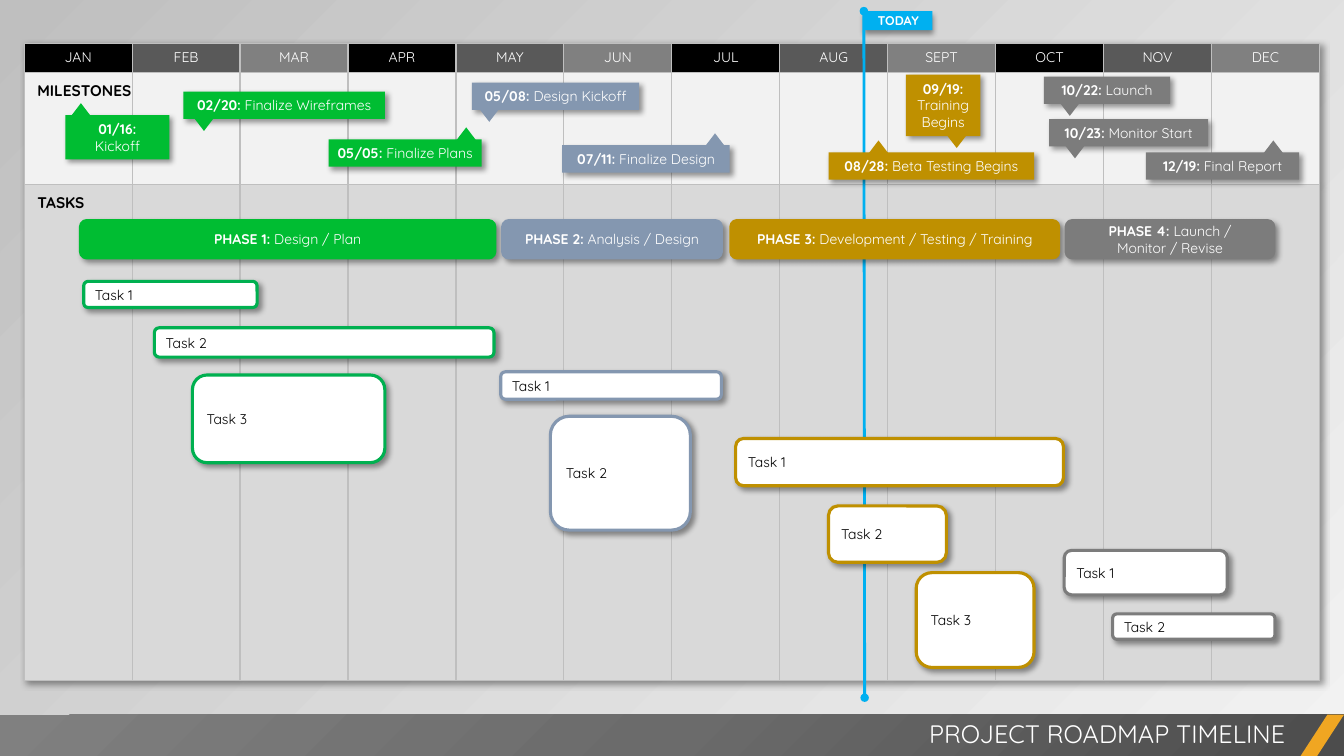
from collections import namedtuple

from pptx import Presentation
from pptx.dml.color import RGBColor
from pptx.enum.shapes import MSO_CONNECTOR, MSO_SHAPE as Shape
from pptx.enum.text import MSO_ANCHOR as Anchor, PP_ALIGN as Align
from pptx.oxml import parse_xml
from pptx.oxml.ns import nsdecls, qn
from pptx.util import Cm, Pt

Box = namedtuple("Box", "left top width height")

FONT = "Quicksand"
BLACK = RGBColor(0x00, 0x00, 0x00)
WHITE = RGBColor(0xFF, 0xFF, 0xFF)
CHARCOAL = RGBColor(0x59, 0x59, 0x59)
MID_GRAY = RGBColor(0x80, 0x80, 0x80)
BORDER = RGBColor(0xBF, 0xBF, 0xBF)
PALE = RGBColor(0xF2, 0xF2, 0xF2)
LIGHT = RGBColor(0xD9, 0xD9, 0xD9)
FOOTER_DARK = RGBColor(0x4C, 0x4C, 0x4C)
FOOTER_MID = RGBColor(0x6B, 0x6B, 0x6B)
ORANGE = RGBColor(0xF0, 0xA6, 0x22)
CYAN = RGBColor(0x00, 0xB0, 0xF0)
GREEN = RGBColor(0x00, 0xBD, 0x32)
TASK_GREEN = RGBColor(0x00, 0xB0, 0x50)
BLUE = RGBColor(0x84, 0x97, 0xB0)
GOLD = RGBColor(0xBF, 0x90, 0x00)
GRAY = RGBColor(0x7C, 0x7C, 0x7C)

MONTHS = "JAN FEB MAR APR MAY JUN JUL AUG SEPT OCT NOV DEC".split()
MONTH_FILLS = [BLACK, CHARCOAL, MID_GRAY]
ROW_HEIGHTS = [0.74, 2.82, 12.5]

# Label, colour, box within the milestones row, pointer offset, pointer direction
MILESTONES = [
    ("05/05: Finalize Plans", GREEN, Box(7.67, 1.68, 3.86, 0.69), 3.18, "up"),
    ("01/16:\nKickoff", GREEN, Box(1.04, 1.07, 2.62, 1.12), 0.1, "up"),
    ("02/20: Finalize Wireframes", GREEN, Box(4.01, 0.48, 5.08, 0.69), 0.23, "down"),
    ("05/08: Design Kickoff", BLUE, Box(11.28, 0.25, 4.22, 0.69), 0.15, "down"),
    ("07/11: Finalize Design", BLUE, Box(13.56, 1.83, 4.22, 0.69), 3.56, "up"),
    ("09/19: Training Begins", GOLD, Box(22.22, 0.05, 1.88, 1.55), 0.99, "down"),
    ("08/28: Beta Testing Begins", GOLD, Box(20.27, 2.01, 5.18, 0.69), 0.97, "up"),
    ("10/22: Launch", GRAY, Box(25.7, 0.1, 3.18, 0.69), 0.36, "down"),
    ("10/23: Monitor Start", GRAY, Box(25.83, 1.17, 4.01, 0.69), 0.36, "down"),
    ("12/19: Final Report", GRAY, Box(28.27, 2.01, 3.86, 0.69), 2.92, "up"),
]

# Label, colour, task outline, left, width, task boxes within the tasks row
PHASES = [
    ("PHASE 1: Design / Plan", GREEN, TASK_GREEN, 1.42, 10.44,
     [Box(1.5, 2.44, 4.37, 0.66), Box(3.28, 3.61, 8.56, 0.74), Box(4.24, 4.8, 4.85, 2.21)]),
    ("PHASE 2: Analysis / Design", BLUE, BLUE, 12.06, 5.51,
     [Box(12.01, 4.72, 5.56, 0.69), Box(13.26, 5.84, 3.53, 2.87)]),
    ("PHASE 3: Development / Testing / Training", GOLD, GOLD, 17.81, 8.26,
     [Box(17.93, 6.4, 8.26, 1.19), Box(20.27, 8.1, 2.97, 1.42), Box(22.48, 9.78, 2.97, 2.39)]),
    ("PHASE 4: Launch / Monitor / Revise", GRAY, GRAY, 26.26, 5.23,
     [Box(26.21, 9.22, 4.11, 1.12), Box(27.43, 10.82, 4.09, 0.64)]),
]


def inside(outer, inner):
    return inner._replace(left=outer.left + inner.left, top=outer.top + inner.top)


def lengths(box):
    return [Cm(value) for value in box]


def set_all(target, values):
    for name, value in values.items():
        setattr(target, name, value)


def shadow_xml(angle):
    return parse_xml(
        f'<a:outerShdw {nsdecls("a")} blurRad="50800" dist="38100" dir="{angle * 60000}"'
        ' algn="tl" rotWithShape="0"><a:srgbClr val="000000"><a:alpha val="40000"/>'
        '</a:srgbClr></a:outerShdw>')


def write(frame, text, color, size=10, align=Align.CENTER, bold=False, **frame_values):
    """Write one paragraph per line; whatever precedes a colon is bold."""
    set_all(frame, {"word_wrap": True, **frame_values})
    for index, line in enumerate(text.split("\n")):
        paragraph = frame.add_paragraph() if index else frame.paragraphs[0]
        paragraph.alignment = align
        head, colon, tail = line.partition(":")
        parts = [(head + colon, True), (tail, False)] if colon else [(line, bold)]
        for content, is_bold in parts:
            if content:
                run = paragraph.add_run()
                run.text = content
                set_all(run.font, {"name": FONT, "size": Pt(size), "bold": is_bold})
                run.font.color.rgb = color


def add_block(shapes, kind, box, fill, outline=None, shadow_angle=None):
    shape = shapes.add_shape(kind, *lengths(box))
    shape.fill.solid()
    shape.fill.fore_color.rgb = fill
    if outline is None:
        shape.line.fill.background()
    else:
        shape.line.color.rgb = outline
        shape.line.width = Pt(2.25)
    shape.shadow.inherit = False
    if shadow_angle is not None:
        shape._element.spPr.find(qn("a:effectLst")).append(shadow_xml(shadow_angle))
    return shape


def add_label(slide, box, text, color, size, **text_values):
    write(slide.shapes.add_textbox(*lengths(box)).text_frame, text, color, size, **text_values)


def add_background(slide):
    fill = slide.background.fill
    fill.gradient()
    fill.gradient_angle = 135
    for stop, position, color in zip(fill.gradient_stops, (0, 1), (PALE, BORDER)):
        stop.position = position
        stop.color.rgb = color


def add_footer(slide, box):
    bar = add_block(slide.shapes, Shape.RECTANGLE, box, FOOTER_DARK)
    stops = "".join(
        f'<a:gs pos="{position}"><a:srgbClr val="{color}"/></a:gs>'
        for position, color in ((0, FOOTER_DARK), (50000, FOOTER_MID), (100000, MID_GRAY)))
    properties = bar._element.spPr
    properties.replace(properties.find(qn("a:solidFill")), parse_xml(
        f'<a:gradFill {nsdecls("a")} rotWithShape="1"><a:gsLst>{stops}</a:gsLst>'
        '<a:path path="circle"><a:fillToRect l="100000" t="100000"/></a:path></a:gradFill>'))
    stripe = add_block(slide.shapes, Shape.PARALLELOGRAM,
                       inside(box, Box(box.width - 1.1, 0, 1.1, box.height)), ORANGE)
    stripe.adjustments[0] = 0.65
    add_label(slide, inside(box, Box(13.34, -0.03, 19.3, 1.02)),
              "PROJECT ROADMAP TIMELINE", WHITE, 18, align=Align.RIGHT)


def add_calendar(slide, box):
    frame = slide.shapes.add_table(len(ROW_HEIGHTS), len(MONTHS), *lengths(box))
    table = frame.table
    set_all(table, {"first_row": False, "horz_banding": False})
    effects = parse_xml(f'<a:effectLst {nsdecls("a")}/>')
    effects.append(shadow_xml(45))
    table._tbl.tblPr.insert(0, effects)
    for row, height in zip(table.rows, ROW_HEIGHTS):
        row.height = Cm(height)
    for column, month in enumerate(MONTHS):
        table.columns[column].width = Cm(box.width / len(MONTHS))
        write(table.cell(0, column).text_frame, month, WHITE)
        fills = [MONTH_FILLS[column % len(MONTH_FILLS)], PALE, LIGHT]
        for row, fill in enumerate(fills):
            cell = table.cell(row, column)
            cell.fill.solid()
            cell.fill.fore_color.rgb = fill
            for position, side in enumerate("LRTB"):
                cell._tc.tcPr.insert(position, parse_xml(
                    f'<a:ln{side} {nsdecls("a")} w="12700"><a:solidFill>'
                    f'<a:srgbClr val="{BORDER}"/></a:solidFill></a:ln{side}>'))


def add_today(slide, box):
    shapes = slide.shapes.add_group_shape().shapes
    flag = add_block(shapes, Shape.RECTANGLE, box._replace(width=1.73, height=0.48),
                     CYAN, shadow_angle=90)
    write(flag.text_frame, "TODAY", WHITE, 9, bold=True, vertical_anchor=Anchor.MIDDLE)
    line = shapes.add_connector(MSO_CONNECTOR.STRAIGHT, Cm(box.left), Cm(box.top),
                                Cm(box.left + box.width), Cm(box.top + box.height))
    line.line.color.rgb = CYAN
    line.line.width = Pt(2)
    properties = line._element.spPr
    for end in ("headEnd", "tailEnd"):
        properties.find(qn("a:ln")).append(parse_xml(f'<a:{end} {nsdecls("a")} type="oval"/>'))
    properties.append(parse_xml(f'<a:effectLst {nsdecls("a")}/>'))


def add_milestones(slide, box):
    add_label(slide, inside(box, Box(0.08, 0.08, 3.38, 0.74)), "MILESTONES",
              BLACK, 11, align=Align.LEFT, bold=True)
    margins = {f"margin_{side}": Cm(0.13) for side in ("left", "top", "right", "bottom")}
    for text, color, place, offset, direction in MILESTONES:
        shapes = slide.shapes.add_group_shape().shapes
        flag = add_block(shapes, Shape.RECTANGLE, inside(box, place), color, shadow_angle=45)
        write(flag.text_frame, text, WHITE, vertical_anchor=Anchor.MIDDLE, **margins)
        top = -0.3 if direction == "up" else place.height - 0.08
        pointer = add_block(shapes, Shape.ISOSCELES_TRIANGLE, inside(
            box, Box(place.left + offset, place.top + top, 0.58, 0.38)), color)
        pointer.rotation = 0 if direction == "up" else 180


def add_tasks(slide, box):
    add_label(slide, inside(box, Box(0.08, 0.08, 3.38, 0.74)), "TASKS",
              BLACK, 11, align=Align.LEFT, bold=True)
    for text, color, outline, left, width, tasks in PHASES:
        bar = add_block(slide.shapes, Shape.ROUNDED_RECTANGLE,
                        inside(box, Box(left, 0.91, width, 0.94)), color, color, 45)
        write(bar.text_frame, text, WHITE, vertical_anchor=Anchor.MIDDLE,
              margin_left=Cm(0.4), margin_right=Cm(0.4))
        for number, place in enumerate(tasks, 1):
            task = add_block(slide.shapes, Shape.ROUNDED_RECTANGLE,
                             inside(box, place), WHITE, outline, 45)
            write(task.text_frame, f"Task {number}", BLACK, align=Align.LEFT,
                  vertical_anchor=Anchor.MIDDLE)


def main():
    presentation = Presentation()
    set_all(presentation, {"slide_width": Cm(33.87), "slide_height": Cm(19.05)})
    slide = presentation.slides.add_slide(presentation.slide_layouts[6])
    calendar = Box(0.61, 1.09, 32.64, sum(ROW_HEIGHTS))
    header, milestones, tasks = ROW_HEIGHTS
    add_background(slide)
    add_footer(slide, Box(0, 18.01, 33.87, 1.05))
    add_calendar(slide, calendar)
    add_today(slide, Box(21.77, 0.28, 0.02, 17.3))
    add_tasks(slide, inside(calendar, Box(0, header + milestones, calendar.width, tasks)))
    add_milestones(slide, inside(calendar, Box(0, header, calendar.width, milestones)))
    presentation.save("out.pptx")


if __name__ == "__main__":
    main()
